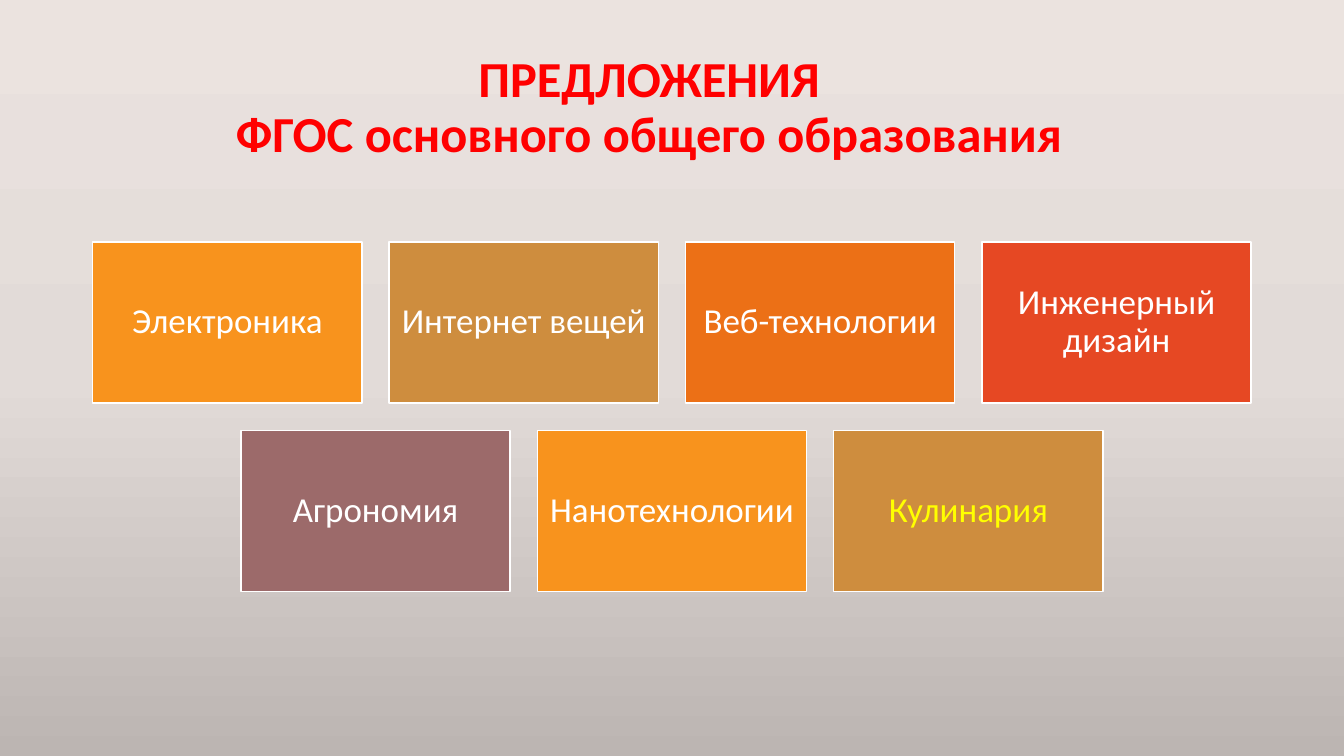
from copy import deepcopy
from pptx import Presentation
from pptx.util import Inches, Pt
from pptx.dml.color import RGBColor as RGB
from pptx.enum.shapes import MSO_SHAPE as Shape
from pptx.enum.text import MSO_ANCHOR as Anchor, PP_ALIGN as Align
from pptx.oxml.ns import qn

# Content
TITLE = "ПРЕДЛОЖЕНИЯ\vФГОС основного общего образования"
ROWS = [
    [("Электроника", "orange", "white"),
     ("Интернет вещей", "ochre", "white"),
     ("Веб-технологии", "amber", "white"),
     ("Инженерный дизайн", "red", "white")],
    [("Агрономия", "mauve", "white"),
     ("Нанотехнологии", "orange", "white"),
     ("Кулинария", "ochre", "yellow")],
]
COLORS = {
    "title": "FF0000", "white": "FFFFFF", "yellow": "FFFF00",
    "orange": "F8931D", "ochre": "CE8D3E", "amber": "EC7016",
    "red": "E64823", "mauve": "9C6A6A",
    "top": "EBE3DF", "middle": "E2DBD8", "bottom": "BCB5B2",
}
BACK = [(0, "top"), (0.5, "middle"), (1, "bottom")]
FONT = "Calibri"

# Grid, in inches
WIDE, HIGH = 13.33, 7.5
CARD_W, CARD_H, GAP = 2.67, 1.6, 0.27
GRID_TOP = HIGH * 0.32


def color(name):
    return RGB.from_string(COLORS[name])


def write(frame, text, size, tint, bold=False):
    frame.word_wrap = True
    frame.vertical_anchor = Anchor.MIDDLE
    frame.text = text
    para = frame.paragraphs[0]
    para.alignment = Align.CENTER
    para.line_spacing = 0.9
    for run in para.runs:
        font = run.font
        font.name, font.size, font.bold = FONT, Pt(size), bold
        font.color.rgb = color(tint)


def add_card(slide, left, top, text, fill, tint):
    card = slide.shapes.add_shape(
        Shape.RECTANGLE, *map(Inches, (left, top, CARD_W, CARD_H)))
    card.shadow.inherit = False
    card.fill.solid()
    card.fill.fore_color.rgb = color(fill)
    card.line.color.rgb = color("white")
    card.line.width = Pt(1)
    frame = card.text_frame
    frame.margin_left = frame.margin_right = Inches(0.1)
    frame.margin_top = frame.margin_bottom = Inches(0.1)
    write(frame, text, 25, tint)


def main():
    deck = Presentation()
    deck.slide_width, deck.slide_height = Inches(WIDE), Inches(HIGH)
    slide = deck.slides.add_slide(deck.slide_layouts[6])

    # Background gradient, top to bottom
    fill = slide.background.fill
    fill.gradient()
    fill.gradient_angle = 270
    stops = slide.element.find(".//" + qn("a:gsLst"))
    stops.append(deepcopy(stops[-1]))
    for stop, (place, name) in zip(fill.gradient_stops, BACK):
        stop.position = place
        stop.color.rgb = color(name)

    # Title
    title = slide.shapes.add_textbox(*map(Inches, (0.69, 0.4, 11.5, 1.36)))
    write(title.text_frame, TITLE, 36, "title", bold=True)

    # Cards, each row centred on the slide
    for r, row in enumerate(ROWS):
        span = len(row) * (CARD_W + GAP) - GAP
        left = (WIDE - span) / 2
        top = GRID_TOP + r * (CARD_H + GAP)
        for c, card in enumerate(row):
            add_card(slide, left + c * (CARD_W + GAP), top, *card)

    deck.save("out.pptx")


if __name__ == "__main__":
    main()
